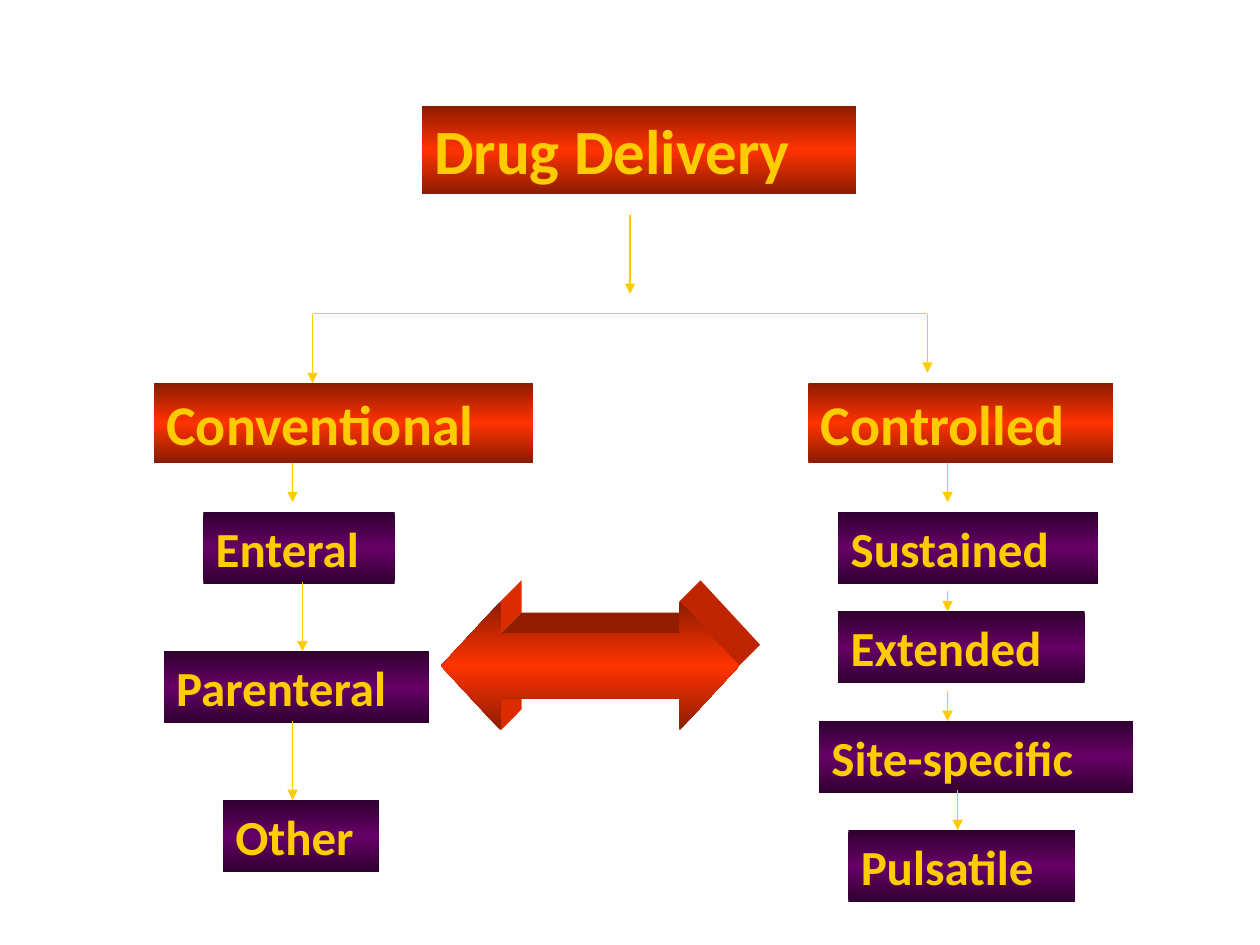
import copy
from dataclasses import dataclass

import lxml.etree
import pptx
import pptx.dml.color
import pptx.enum.shapes
import pptx.enum.text
import pptx.oxml.ns
import pptx.util

Pt = pptx.util.Pt
RGBColor = pptx.dml.color.RGBColor
qn = pptx.oxml.ns.qn
SHAPES = pptx.enum.shapes.MSO_SHAPE

GOLD = RGBColor(0xFF, 0xCC, 0x00)
RED = RGBColor(0xFF, 0x33, 0x00)
RED_EDGE = RGBColor(0x8C, 0x1C, 0x00)
PURPLE = RGBColor(0x66, 0x00, 0x66)
PURPLE_EDGE = RGBColor(0x30, 0x00, 0x30)
HEAD_SIDE = RGBColor(0xDD, 0x2B, 0x00)
SHAFT_TOP = RGBColor(0x93, 0x1D, 0x00)
TIP_SIDE = RGBColor(0xBF, 0x25, 0x00)


@dataclass(frozen=True)
class Style:
    size: float
    height: float
    middle: RGBColor
    edge: RGBColor


@dataclass(frozen=True)
class Box:
    text: str
    left: float
    top: float
    width: float
    style: Style


@dataclass(frozen=True)
class Line:
    start: tuple[float, float]
    end: tuple[float, float]
    arrow: bool = True


TITLE = Style(36, 50.4, RED, RED_EDGE)
GROUP = Style(32, 45.4, RED, RED_EDGE)
KIND = Style(28, 41, PURPLE, PURPLE_EDGE)

BOXES = [
    Box("Conventional", 88, 219, 216.5, GROUP),
    Box("Controlled", 462, 219, 174, GROUP),
    Box("Drug Delivery", 241, 60.4, 248.2, TITLE),
    Box("Sustained", 479, 292.6, 148.5, KIND),
    Box("Extended", 479, 349.4, 140.8, KIND),
    Box("Site-specific", 468, 412, 179.7, KIND),
    Box("Pulsatile", 484.8, 474.4, 129.6, KIND),
    Box("Enteral", 116.2, 292.6, 109.4, KIND),
    Box("Parenteral", 93.6, 372.2, 151.6, KIND),
    Box("Other", 127.4, 457.2, 89.3, KIND),
]


def down(x: float, top: float, bottom: float) -> Line:
    return Line((x, top), (x, bottom))


FORK_LEFT, FORK_RIGHT, FORK_TOP = 178.6, 530, 179.3
FORK = [
    down(360, 122.6, 168),
    Line((FORK_LEFT, FORK_TOP), (FORK_RIGHT, FORK_TOP), arrow=False),
    down(FORK_LEFT, FORK_TOP, 219),
    down(FORK_RIGHT, FORK_TOP, 213),
]
STEPS = [
    down(167.2, 264.4, 287),
    down(172.8, 332.6, 372.2),
    down(167.2, 412, 457.2),
    down(541.5, 264.4, 287),
    down(541.5, 338, 349.4),
    down(541.5, 394.6, 412),
    down(547.2, 451.4, 474.4),
]


def set_gradient(shape, middle: RGBColor, edge: RGBColor) -> None:
    """Fill from edge colour to middle colour and back, top to bottom."""
    shape.fill.gradient()
    shape.fill.gradient_angle = 270
    stop_list = shape._element.spPr.find(".//" + qn("a:gsLst"))
    stop_list.append(copy.deepcopy(stop_list[-1]))
    for stop, position, color in zip(
        shape.fill.gradient_stops, (0, 0.5, 1), (edge, middle, edge)
    ):
        stop.position = position
        stop.color.rgb = color


def draw_line(slide, line: Line) -> None:
    connector = slide.shapes.add_connector(
        pptx.enum.shapes.MSO_CONNECTOR.STRAIGHT,
        *map(Pt, line.start + line.end),
    )
    connector.line.color.rgb = GOLD
    connector.line.width = Pt(0.75)
    if line.arrow:
        outline = connector.line._get_or_add_ln()
        lxml.etree.SubElement(outline, qn("a:tailEnd"), type="triangle")
    lxml.etree.SubElement(connector._element.spPr, qn("a:effectLst"))


def draw_box(slide, box: Box) -> None:
    style = box.style
    shape = slide.shapes.add_shape(
        SHAPES.RECTANGLE,
        *map(Pt, (box.left, box.top, box.width, style.height)),
    )
    shape.shadow.inherit = False
    shape.line.fill.background()
    set_gradient(shape, style.middle, style.edge)
    frame = shape.text_frame
    frame.word_wrap = True
    frame.vertical_anchor = pptx.enum.text.MSO_ANCHOR.TOP
    para = frame.paragraphs[0]
    para.alignment = pptx.enum.text.PP_ALIGN.LEFT
    span = para.add_run()
    span.text = box.text
    font_format = {"name": "Calibri", "size": Pt(style.size), "bold": True}
    for name, value in font_format.items():
        setattr(span.font, name, value)
    span.font.color.rgb = GOLD


def draw_side(slide, start: tuple, end: tuple, depth: float, color: RGBColor) -> None:
    """Draw the face swept by an edge moving up and to the right."""
    (x1, y1), (x2, y2) = start, end
    builder = slide.shapes.build_freeform(Pt(x1), Pt(y1))
    corners = [(x1 + depth, y1 - depth), (x2 + depth, y2 - depth), (x2, y2)]
    builder.add_line_segments([(Pt(x), Pt(y)) for x, y in corners], close=True)
    side = builder.convert_to_shape()
    side.shadow.inherit = False
    side.fill.solid()
    side.fill.fore_color.rgb = color
    side.line.fill.background()


def draw_double_arrow(slide) -> None:
    left, top, width, height, depth = 252, 343.6, 170.4, 73.8, 12
    head = 0.462 * height
    right, bottom = left + width, top + height
    neck_left, neck_right = left + head, right - head
    shaft_top, shaft_bottom = top + height / 4, bottom - height / 4
    for start, end, color in [
        ((neck_left, top), (neck_left, shaft_top), HEAD_SIDE),
        ((neck_left, shaft_bottom), (neck_left, bottom), HEAD_SIDE),
        ((neck_left, shaft_top), (neck_right, shaft_top), SHAFT_TOP),
        ((neck_right, top), (right, top + height / 2), TIP_SIDE),
    ]:
        draw_side(slide, start, end, depth, color)
    arrow = slide.shapes.add_shape(
        SHAPES.LEFT_RIGHT_ARROW, *map(Pt, (left, top, width, height))
    )
    arrow.adjustments[0] = 0.5
    arrow.adjustments[1] = 0.462
    arrow.shadow.inherit = False
    arrow.line.fill.background()
    set_gradient(arrow, RED, RED_EDGE)


def main() -> None:
    deck = pptx.Presentation()
    deck.slide_width, deck.slide_height = Pt(720), Pt(540)
    page = deck.slides.add_slide(deck.slide_layouts[6])
    for line in FORK:
        draw_line(page, line)
    for box in BOXES:
        draw_box(page, box)
    for line in STEPS:
        draw_line(page, line)
    draw_double_arrow(page)
    deck.save("out.pptx")


if __name__ == "__main__":
    main()
